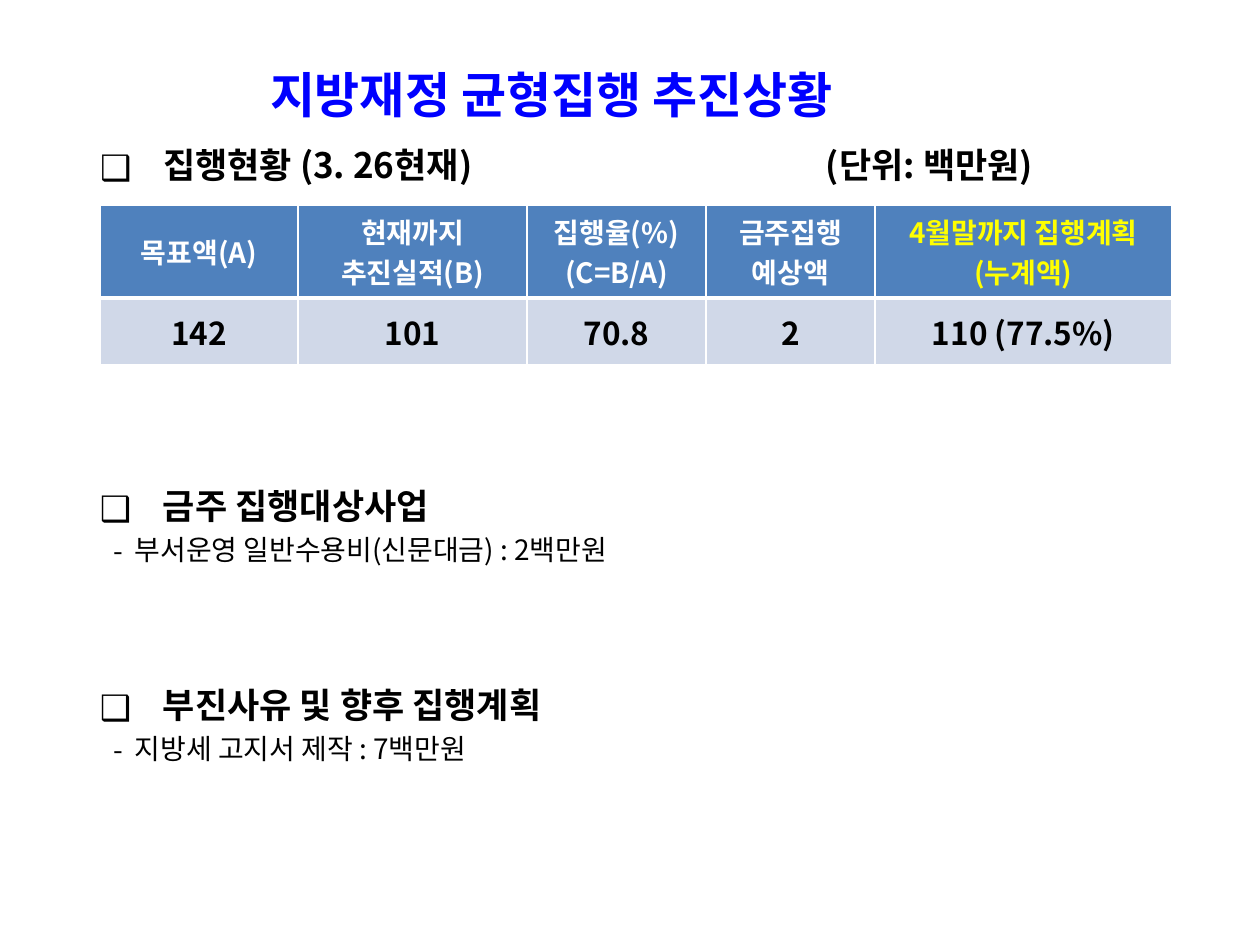
"""Build the slide on balanced local budget execution."""
from dataclasses import dataclass

from lxml.etree import SubElement
from pptx import Presentation
from pptx.dml.color import RGBColor
from pptx.enum.text import MSO_ANCHOR, PP_ALIGN
from pptx.oxml.ns import qn
from pptx.util import Pt

PX = 914400 / 126


@dataclass(frozen=True)
class Theme:
    font: str = "Noto Sans CJK KR"
    title: str = "0000FF"
    ink: str = "000000"
    white: str = "FFFFFF"
    accent: str = "FFFF00"
    header_fill: str = "4F81BD"
    body_fill: str = "D0D8E8"
    title_size: int = 28
    heading_size: int = 20
    value_size: int = 18
    text_size: int = 16


theme = Theme()


def add_span(para, text, size, color, bold=True):
    """Add one formatted run to a paragraph."""
    span = para.add_run()
    span.text = text
    span.font.size = Pt(size)
    span.font.bold = bold
    span.font.color.rgb = RGBColor.from_string(color)
    span.font.name = theme.font
    SubElement(span._r.get_or_add_rPr(), qn("a:ea"), typeface=theme.font)


def set_bullet(para, symbol, left, hang):
    """Give a paragraph a hanging bullet."""
    properties = para._p.get_or_add_pPr()
    properties.set("marL", str(round(left * PX)))
    properties.set("indent", str(round(-hang * PX)))
    SubElement(properties, qn("a:buFont"), typeface=theme.font)
    SubElement(properties, qn("a:buChar"), char=symbol)


deck = Presentation()
deck.slide_width, deck.slide_height = round(1260 * PX), round(945 * PX)
page = deck.slides.add_slide(deck.slide_layouts[5])

title = page.shapes.title
title.left, title.top, title.width, title.height = [round(n * PX) for n in (270, 65, 640, 71)]
frame = title.text_frame
frame.margin_left = frame.margin_right = frame.margin_top = frame.margin_bottom = 0
frame.vertical_anchor = MSO_ANCHOR.TOP
frame.paragraphs[0].alignment = PP_ALIGN.LEFT
add_span(frame.paragraphs[0], "지방재정 균형집행 추진상황", theme.title_size, theme.title)

blocks = [
    (100, 144, 600, "❑", "집행현황 (3. 26현재)", None),
    (826, 144, 345, None, "(단위: 백만원)", None),
    (100, 485, 1071, "❑", "금주 집행대상사업", "부서운영 일반수용비(신문대금) : 2백만원"),
    (100, 684, 1071, "❑", "부진사유 및 향후 집행계획", "지방세 고지서 제작 : 7백만원"),
]
for left, top, width, symbol, heading, item in blocks:
    height = 98 if item else 51
    box = page.shapes.add_textbox(*[round(n * PX) for n in (left, top, width, height)])
    frame = box.text_frame
    frame.word_wrap = True
    frame.margin_left = frame.margin_right = frame.margin_top = frame.margin_bottom = 0
    para = frame.paragraphs[0]
    if symbol:
        set_bullet(para, symbol, 63, 63)
    add_span(para, heading, theme.heading_size, theme.ink)
    if item:
        para = frame.add_paragraph()
        para.space_before = Pt(3)
        set_bullet(para, "-", 35, 21)
        add_span(para, item, theme.text_size, theme.ink, bold=False)

columns = [
    (198, ["목표액(A)"], "142", theme.white),
    (229, ["현재까지", "추진실적(B)"], "101", theme.white),
    (179, ["집행율(%)", "(C=B/A)"], "70.8", theme.white),
    (169, ["금주집행", "예상액"], "2", theme.white),
    (297, ["4월말까지 집행계획", "(누계액)"], "110 (77.5%)", theme.accent),
]
row_heights = [93, 67]
table_width = sum(column[0] for column in columns)
table = page.shapes.add_table(
    len(row_heights), len(columns),
    *[round(n * PX) for n in (100, 205, table_width, sum(row_heights))],
).table
table.horz_banding = False
for row, height in zip(table.rows, row_heights):
    row.height = round(height * PX)

for index, (width, labels, value, label_color) in enumerate(columns):
    table.columns[index].width = round(width * PX)
    rows = [
        (labels, theme.text_size, label_color, theme.header_fill, 1, 3),
        ([value], theme.value_size, theme.ink, theme.body_fill, 3, 1),
    ]
    for number, (lines, size, color, fill, upper, lower) in enumerate(rows):
        cell = table.cell(number, index)
        cell.vertical_anchor = MSO_ANCHOR.MIDDLE
        properties = cell._tc.get_or_add_tcPr()
        for side, weight in (("L", 1), ("R", 1), ("T", upper), ("B", lower)):
            border = SubElement(properties, qn(f"a:ln{side}"), w=str(Pt(weight)))
            paint = SubElement(border, qn("a:solidFill"))
            SubElement(paint, qn("a:srgbClr"), val=theme.white)
        cell.fill.solid()
        cell.fill.fore_color.rgb = RGBColor.from_string(fill)
        for position, line in enumerate(lines):
            frame = cell.text_frame
            para = frame.add_paragraph() if position else frame.paragraphs[0]
            para.alignment = PP_ALIGN.CENTER
            add_span(para, line, size, color)

deck.save("out.pptx")
